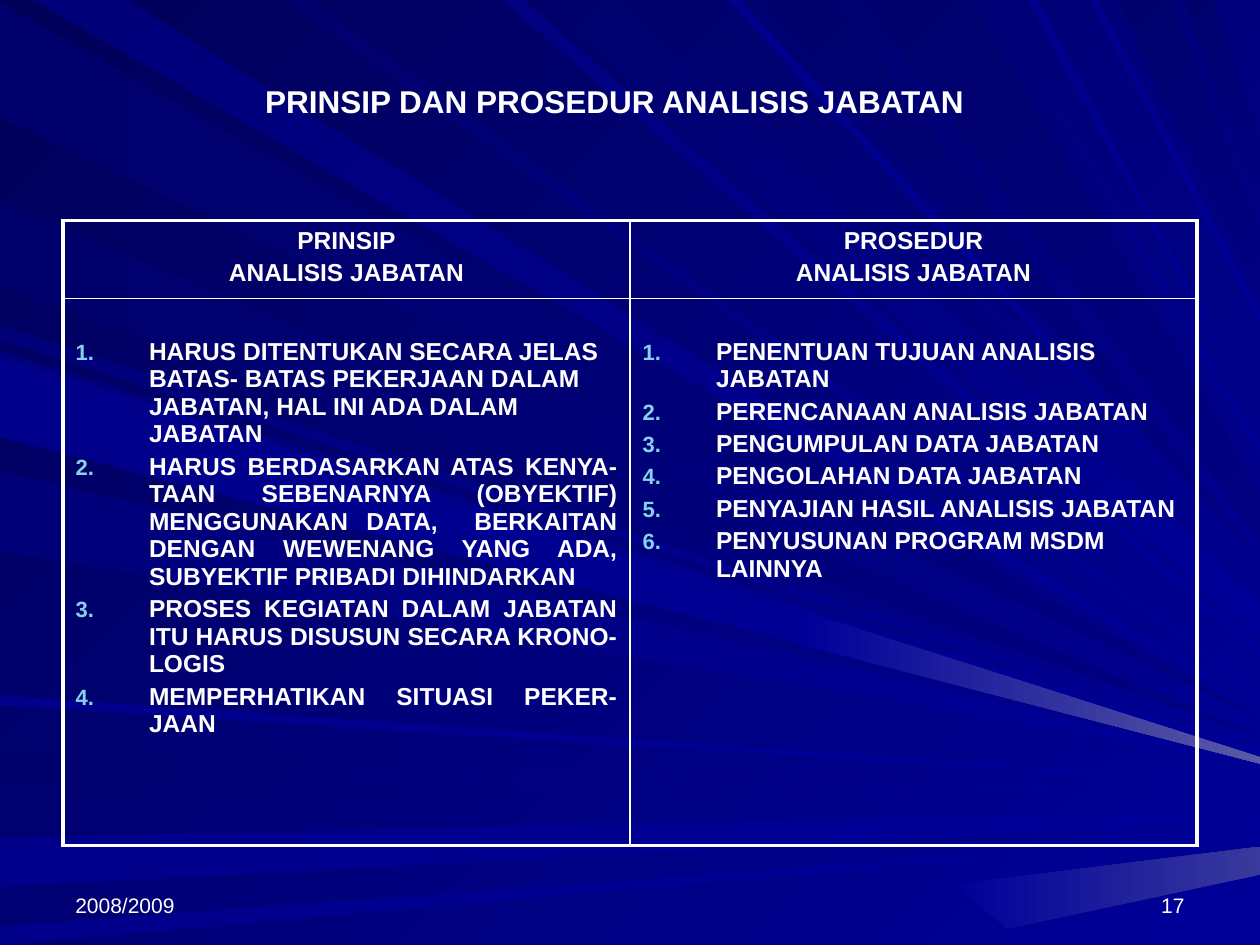
import pptx
import pptx.dml.color
import pptx.enum.text
import pptx.oxml
import pptx.oxml.ns
import pptx.util

Cm = pptx.util.Cm
Pt = pptx.util.Pt
RGB = pptx.dml.color.RGBColor
ALIGN = pptx.enum.text.PP_ALIGN
ANCHOR = pptx.enum.text.MSO_ANCHOR

WHITE = RGB(0xFF, 0xFF, 0xFF)
SKY = RGB(0x86, 0xD1, 0xEC)
NIGHT = RGB(0x00, 0x00, 0x58)
DUSK = RGB(0x00, 0x00, 0x6D)
DEEP = RGB(0x00, 0x00, 0x78)
NAVY = RGB(0x00, 0x00, 0x80)
ROYAL = RGB(0x00, 0x00, 0x8A)
BLUE = RGB(0x00, 0x00, 0x99)
HAZE = RGB(0x39, 0x39, 0x9E)
GLOW = RGB(0x5A, 0x5A, 0xA6)

FONT = "Arial"
UNIT = Cm(0.0254)  # one step of the ray grid
WIDE = 1000  # steps across the slide
THICK, THIN = 2.25, 1

# Rays run from one edge to the right edge:
# start, stop on the edge, height at the right, half width there, colours
SIDE_RAYS = [
    (2, 93, 570, 0, DUSK, NAVY),
    (596, 623, 632, 0, DUSK, BLUE),
    (665, 704, 647, 4, ROYAL, BLUE),
    (735, 750, 662, 0, ROYAL, BLUE),
    (258, 270, 589, 0, DEEP, BLUE),
    (159, 228, 585, 0, DUSK, NAVY),
    (278, 342, 599, 3, DEEP, BLUE),
    (374, 437, 606, 0, DEEP, BLUE),
    (552, 560, 622, 1, ROYAL, BLUE),
    (283, 347, 603, 2, ROYAL, BLUE),
]
TOP_RAYS = [
    (26, 101, 563, 0, DEEP, BLUE),
    (398, 416, 518, 3, NAVY, BLUE),
    (426, 492, 493, 14, DUSK, BLUE),
    (540, 552, 463, 0, DUSK, BLUE),
    (606, 661, 446, 0, DUSK, NAVY),
    (887, 930, 210, 27, DUSK, NAVY),
    (939, 964, 140, 27, DUSK, NAVY),
    (225, 247, 550, 2, DUSK, BLUE),
    (577, 588, 454, 0, ROYAL, BLUE),
    (686, 770, 409, 19, DUSK, NAVY),
    (785, 792, 357, 3, DEEP, BLUE),
    (815, 824, 335, 0, ROYAL, BLUE),
    (865, 872, 253, 4, ROYAL, BLUE),
]
BEAM = [(637, 485), (WIDE, 601), (WIDE, 606), (633, 511)]
PATCH = [(756, 702), (WIDE, 672), (WIDE, 694), (800, 737)]

HEADS = [("PRINSIP", "ANALISIS JABATAN"), ("PROSEDUR", "ANALISIS JABATAN")]
LISTS = [
    [
        ("HARUS DITENTUKAN SECARA JELAS BATAS- BATAS PEKERJAAN DALAM JABATAN, "
         "HAL INI ADA DALAM JABATAN", ALIGN.LEFT),
        ("HARUS BERDASARKAN ATAS KENYA-TAAN SEBENARNYA (OBYEKTIF) MENGGUNAKAN DATA,  "
         "BERKAITAN DENGAN WEWENANG YANG ADA, SUBYEKTIF PRIBADI DIHINDARKAN", ALIGN.JUSTIFY),
        ("PROSES KEGIATAN DALAM JABATAN ITU HARUS DISUSUN SECARA KRONO-LOGIS", ALIGN.JUSTIFY),
        ("MEMPERHATIKAN SITUASI PEKER-JAAN", ALIGN.JUSTIFY),
    ],
    [
        ("PENENTUAN TUJUAN ANALISIS JABATAN", ALIGN.LEFT),
        ("PERENCANAAN ANALISIS JABATAN", ALIGN.LEFT),
        ("PENGUMPULAN DATA JABATAN", ALIGN.LEFT),
        ("PENGOLAHAN DATA JABATAN", ALIGN.LEFT),
        ("PENYAJIAN HASIL ANALISIS JABATAN", ALIGN.LEFT),
        ("PENYUSUNAN PROGRAM MSDM LAINNYA", ALIGN.LEFT),
    ],
]


def blend(fill, first, last, angle):
    """Fill from first to last, with the angle measured clockwise."""
    fill.gradient()
    fill.gradient_angle = 360 - angle
    for stop, color in zip(fill.gradient_stops, (first, last)):
        stop.color.rgb = color


def add_ray(slide, points, first, last, angle=0):
    pen = slide.shapes.build_freeform(*points[0], scale=UNIT)
    pen.add_line_segments(points[1:], close=True)
    ray = pen.convert_to_shape()
    ray.shadow.inherit = False
    ray.line.fill.background()
    blend(ray.fill, first, last, angle)


def add_rays(slide):
    for start, stop, end, half, first, last in SIDE_RAYS:
        tip = [(WIDE, end + half), (WIDE, end - half)]
        add_ray(slide, [(0, start), (0, stop)] + tip, first, last)
    for start, stop, end, half, first, last in TOP_RAYS:
        tip = [(WIDE, end - half), (WIDE, end + half)]
        add_ray(slide, [(start, 0), (stop, 0)] + tip, first, last, angle=45)
    add_ray(slide, PATCH, BLUE, HAZE)
    add_ray(slide, BEAM, BLUE, GLOW)


def write(frame, text, size=14, bold=True, align=ALIGN.LEFT, gap=0):
    """Fill the first paragraph of the frame, or add one below the others."""
    par = frame.add_paragraph() if frame.text else frame.paragraphs[0]
    par.alignment = align
    par.space_before = Pt(gap)
    run = par.add_run()
    run.text = text
    run.font.name = FONT
    run.font.size = Pt(size)
    run.font.bold = bold
    run.font.color.rgb = WHITE
    return par


def add_xml(parent, xml):
    space = pptx.oxml.ns.nsdecls("a")
    parent.append(pptx.oxml.parse_xml(xml.replace(" ", f" {space} ", 1)))


def number(par):
    props = par._p.get_or_add_pPr()
    props.set("marL", str(Cm(1.48)))
    props.set("indent", str(-Cm(1.48)))
    add_xml(props, f'<a:buClr ><a:srgbClr val="{SKY}"/></a:buClr>')
    add_xml(props, '<a:buSzPct val="90000"/>')
    add_xml(props, '<a:buAutoNum type="arabicPeriod"/>')


def frame_cell(cell, row, col):
    """Thick lines on the outside of the two by two table, thin ones inside."""
    outer = {"L": col == 0, "R": col == 1, "T": row == 0, "B": row == 1}
    for side, out in outer.items():
        width = Pt(THICK if out else THIN)
        add_xml(cell._tc.get_or_add_tcPr(),
                f'<a:ln{side} w="{width}"><a:solidFill><a:srgbClr val="{WHITE}"/>'
                f'</a:solidFill></a:ln{side}>')
    cell.fill.background()


def add_title(slide, text):
    title = slide.shapes.title
    title.left, title.top, title.width, title.height = Cm(3.6), Cm(0.76), Cm(17.58), Cm(2.54)
    title.text_frame.vertical_anchor = ANCHOR.MIDDLE
    write(title.text_frame, text, size=18, align=ALIGN.CENTER)
    title.element.getparent().append(title.element)  # in front of the rays


def add_note(slide, text, left, align):
    box = slide.shapes.add_textbox(Cm(left), Cm(17.35), Cm(5.92), Cm(1.27))
    box.text_frame.word_wrap = True
    box.text_frame.vertical_anchor = ANCHOR.BOTTOM
    write(box.text_frame, text, size=12, bold=False, align=align)


def add_grid(slide):
    table = slide.shapes.add_table(2, 2, Cm(1.27), Cm(4.45), Cm(22.86), Cm(12.6)).table
    table.first_row = table.horz_banding = False
    table.rows[0].height, table.rows[1].height = Cm(1.57), Cm(11.03)
    for col in range(2):
        head, body = table.cell(0, col), table.cell(1, col)
        for row, cell in enumerate((head, body)):
            frame_cell(cell, row, col)
        for line in HEADS[col]:
            write(head.text_frame, line, align=ALIGN.CENTER, gap=2.8)
        body.margin_top = Cm(0.79)
        for text, align in LISTS[col]:
            number(write(body.text_frame, text, align=align, gap=2.8))


def main():
    deck = pptx.Presentation()
    deck.slide_width, deck.slide_height = Cm(25.4), Cm(19.05)
    slide = deck.slides.add_slide(deck.slide_layouts[5])
    blend(slide.background.fill, NIGHT, BLUE, 45)
    add_rays(slide)
    add_note(slide, "2008/2009", 1.27, ALIGN.LEFT)
    add_note(slide, "17", 18.21, ALIGN.RIGHT)
    add_title(slide, "PRINSIP DAN PROSEDUR ANALISIS JABATAN")
    add_grid(slide)
    deck.save("out.pptx")


if __name__ == "__main__":
    main()
